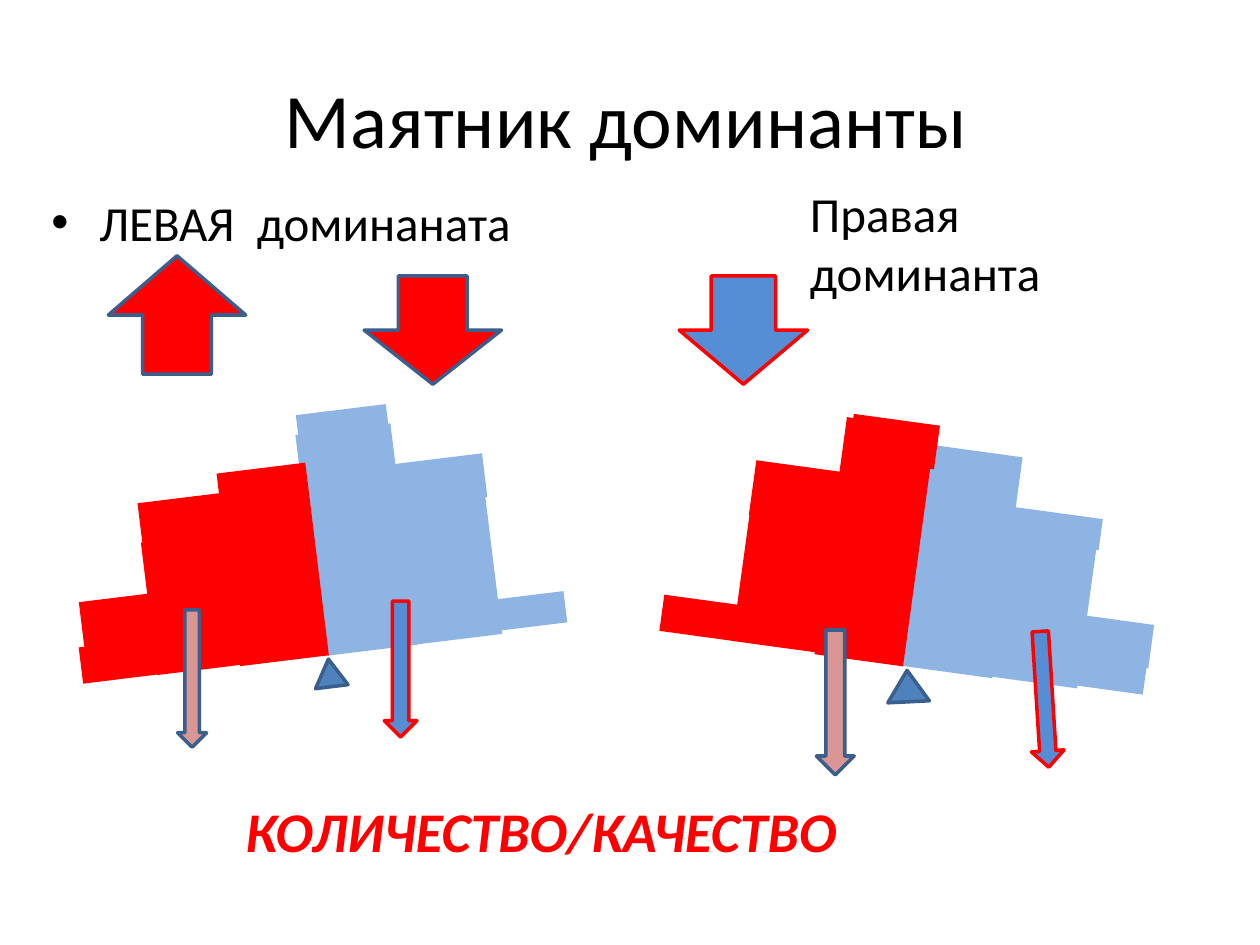
from pptx import Presentation, util as u
from pptx.dml.color import RGBColor
from pptx.enum import shapes as s, text as t
from pptx.oxml.ns import qn
from lxml import etree

BLACK = RGBColor(0x00, 0x00, 0x00)
RED = RGBColor(0xFF, 0x00, 0x00)
PINK = RGBColor(0xD9, 0x96, 0x94)
LIGHT_BLUE = RGBColor(0x8E, 0xB4, 0xE3)
BLUE = RGBColor(0x55, 0x8E, 0xD5)
PIVOT_BLUE = RGBColor(0x4F, 0x81, 0xBD)
OUTLINE = RGBColor(0x3A, 0x5F, 0x8C)

RECTANGLE = s.MSO_SHAPE.RECTANGLE
ARROW = s.MSO_SHAPE.DOWN_ARROW
TRIANGLE = s.MSO_SHAPE.ISOSCELES_TRIANGLE

# Content: boxes are left, top, width, height in inches
TITLE = ("Маятник доминанты", (0.47, 0.31, 9, 1.25))
LABELS = [
    ("ЛЕВАЯ  доминаната", (0.31, 1.48, 4.73, 5.26), dict(size=u.Pt(28)), BLACK),
    ("Правая доминанта", (6.33, 1.41, 2.97, 1.04), dict(size=u.Pt(28)), BLACK),
    ("КОЛИЧЕСТВО/КАЧЕСТВО", (1.85, 6.27, 4.96, 0.64),
     dict(size=u.Pt(32), bold=True, italic=True), RED),
]
PENDULUMS = [
    dict(
        tilt=353,
        bars={
            LIGHT_BLUE: [(2.45, 3.4, 0.76, 1.77), (3.19, 3.95, 0.73, 1.13),
                         (3.84, 4.73, 0.65, 0.25), (3.14, 3.64, 0.71, 0.35),
                         (2.36, 3.25, 0.72, 0.25)],
            RED: [(1.81, 3.71, 0.71, 1.54), (1.18, 4.26, 0.7, 1.06),
                  (0.64, 5.1, 0.61, 0.29), (1.11, 3.95, 0.71, 0.35),
                  (0.65, 4.73, 0.78, 0.44)],
        },
        details=[(ARROW, (3.05, 4.77, 0.26, 1.08), BLUE, RED, 0),
                 (ARROW, (1.41, 4.84, 0.23, 1.09), PINK, OUTLINE, 0),
                 (TRIANGLE, (2.49, 5.23, 0.26, 0.22), PIVOT_BLUE, OUTLINE, 353)],
    ),
    dict(
        tilt=7.8,
        bars={
            LIGHT_BLUE: [(7.24, 3.57, 0.76, 1.77), (7.9, 4.29, 0.73, 1.13),
                         (8.44, 5.22, 0.65, 0.25), (8.43, 4.91, 0.71, 0.35),
                         (8.02, 4.07, 0.72, 0.25)],
            RED: [(6.59, 3.35, 0.71, 1.9), (5.88, 4.08, 0.7, 1.06),
                  (5.25, 4.76, 0.61, 0.29), (6.75, 3.33, 0.69, 0.35),
                  (5.97, 3.7, 0.72, 0.44)],
        },
        details=[(ARROW, (8.16, 5.01, 0.26, 1.08), BLUE, RED, 356.4),
                 (ARROW, (6.48, 5, 0.3, 1.15), PINK, OUTLINE, 0),
                 (TRIANGLE, (7.04, 5.32, 0.33, 0.25), PIVOT_BLUE, OUTLINE, 357.2)],
    ),
]
BIG_ARROWS = [
    (ARROW, (0.86, 2.03, 1.09, 0.94), RED, OUTLINE, 180),
    (ARROW, (5.39, 2.19, 1.02, 0.86), BLUE, RED, 0),
    (ARROW, (2.89, 2.19, 1.09, 0.86), RED, OUTLINE, 0),
]


def inches(box):
    return [u.Inches(value) for value in box]


def add_figure(parent, kind, box, fill, line=None, rotation=0):
    shape = parent.add_shape(kind, *inches(box))
    shape.shadow.inherit = False
    shape.rotation = rotation
    shape.fill.solid()
    shape.fill.fore_color.rgb = fill
    if line is None:
        shape.line.fill.background()
    else:
        shape.line.color.rgb = line
        shape.line.width = u.Pt(2)


def write(shape, words, font_format, color):
    frame = shape.text_frame
    frame.word_wrap = True
    paragraph = frame.paragraphs[0]
    run = paragraph.add_run()
    run.text = words
    for name, value in dict(name="Calibri", **font_format).items():
        setattr(run.font, name, value)
    run.font.color.rgb = color
    return paragraph


def add_bullet(paragraph):
    paragraph.space_before = u.Pt(5.6)
    properties = paragraph._p.get_or_add_pPr()
    properties.set("marL", str(u.Inches(0.38)))
    properties.set("indent", str(u.Inches(-0.38)))
    etree.SubElement(properties, qn("a:buFont"), typeface="Arial")
    etree.SubElement(properties, qn("a:buChar"), char="•")


def main():
    presentation = Presentation()
    presentation.slide_width, presentation.slide_height = inches((10, 7.5))
    slide = presentation.slides.add_slide(presentation.slide_layouts[5])

    # Title
    words, box = TITLE
    title = slide.shapes.title
    title.left, title.top, title.width, title.height = inches(box)
    title.text_frame.vertical_anchor = t.MSO_ANCHOR.MIDDLE
    paragraph = write(title, words, dict(size=u.Pt(44)), BLACK)
    paragraph.alignment = t.PP_ALIGN.CENTER

    # Labels, the first one bulleted
    for index, (words, box, font_format, color) in enumerate(LABELS):
        label = slide.shapes.add_textbox(*inches(box))
        paragraph = write(label, words, font_format, color)
        if index == 0:
            add_bullet(paragraph)

    # Tilted pendulums with their force arrows and pivots
    for pendulum in PENDULUMS:
        group = slide.shapes.add_group_shape().shapes
        for color, boxes in pendulum["bars"].items():
            for box in boxes:
                add_figure(group, RECTANGLE, box, color, rotation=pendulum["tilt"])
        for detail in pendulum["details"]:
            add_figure(group, *detail)

    # Large arrows above the pendulums
    for arrow in BIG_ARROWS:
        add_figure(slide.shapes, *arrow)

    presentation.save("out.pptx")


if __name__ == "__main__":
    main()
